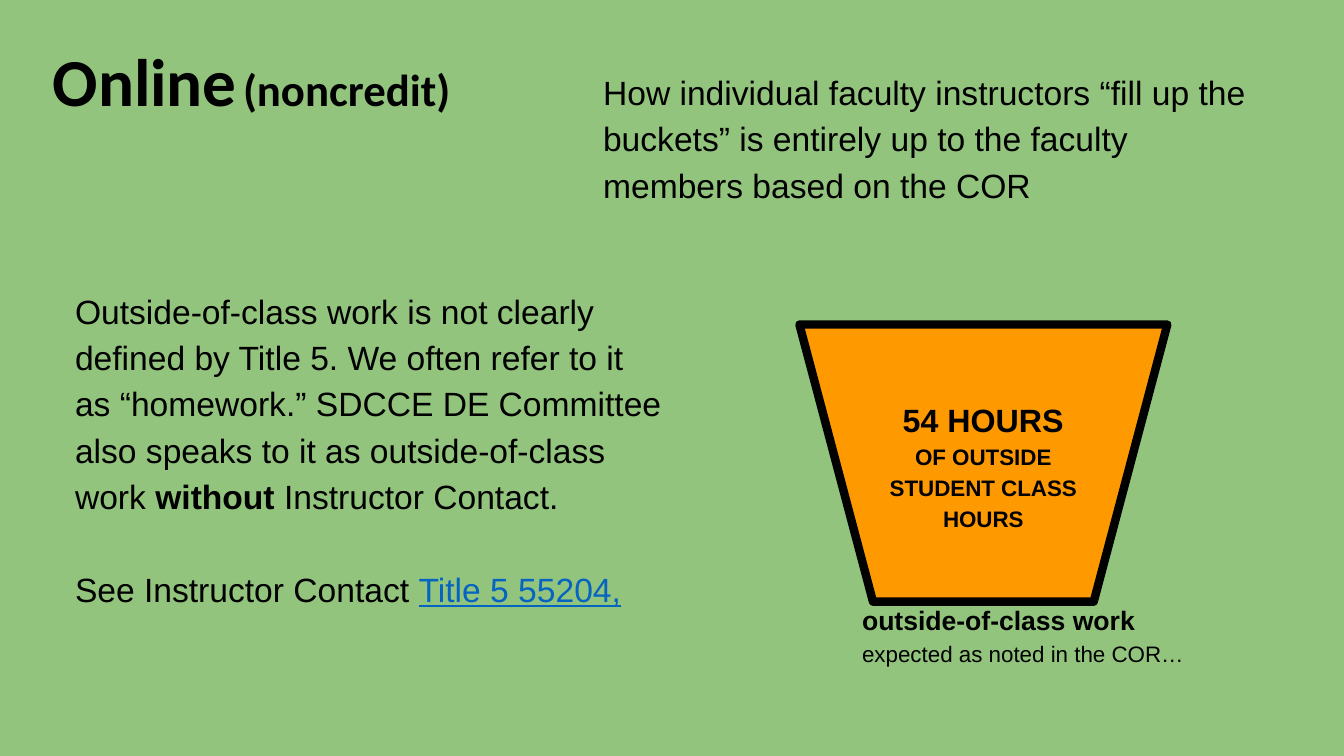
from dataclasses import dataclass

from pptx import Presentation
from pptx.dml.color import RGBColor
from pptx.enum.shapes import MSO_SHAPE
from pptx.enum.text import MSO_ANCHOR, PP_ALIGN
from pptx.util import Pt


@dataclass(frozen=True)
class Theme:
    green: RGBColor = RGBColor.from_string("93C47D")
    orange: RGBColor = RGBColor.from_string("FF9900")
    black: RGBColor = RGBColor.from_string("000000")
    link: RGBColor = RGBColor.from_string("0563C1")
    heading_font: str = "Calibri"
    body_font: str = "Arial"
    title: int = 48
    subtitle: int = 32
    body: int = 24
    hours: int = 23
    caption: int = 19
    small: int = 16
    line_spacing: float = 1.15


theme = Theme()


def set_up_frame(shape, anchor=MSO_ANCHOR.TOP):
    """Apply the slide's margins, wrapping and anchor; return the first paragraph."""
    frame = shape.text_frame
    frame.word_wrap = True
    frame.vertical_anchor = anchor
    frame.margin_left = frame.margin_right = Pt(9.6)
    frame.margin_top = frame.margin_bottom = Pt(9.6)
    paragraph = frame.paragraphs[0]
    paragraph.line_spacing = theme.line_spacing
    return paragraph


def add_run(paragraph, text, size, bold=False, font=theme.body_font, color=theme.black):
    run = paragraph.add_run()
    run.text = text
    run.font.size = Pt(size)
    run.font.bold = bold
    run.font.name = font
    run.font.color.rgb = color
    return run


presentation = Presentation()
presentation.slide_width, presentation.slide_height = Pt(960), Pt(540)
slide = presentation.slides.add_slide(presentation.slide_layouts[6])
shapes = slide.shapes

# Backdrop
backdrop = shapes.add_shape(MSO_SHAPE.RECTANGLE, Pt(-8), Pt(-8), Pt(971), Pt(549))
backdrop.shadow.inherit = False
backdrop.fill.solid()
backdrop.fill.fore_color.rgb = theme.green
backdrop.line.fill.background()

# Title
title = shapes.add_textbox(Pt(28), Pt(37.5), Pt(448), Pt(57.5))
paragraph = set_up_frame(title, MSO_ANCHOR.BOTTOM)
paragraph.line_spacing = 1.0
for text, size in (("Online", theme.title), (" ", theme.caption), ("(noncredit)", theme.subtitle)):
    add_run(paragraph, text, size, bold=True, font=theme.heading_font)

# Bucket
bucket = shapes.add_shape(
    MSO_SHAPE.FLOWCHART_MANUAL_OPERATION, Pt(571), Pt(231.8), Pt(262.8), Pt(198)
)
bucket.shadow.inherit = False
bucket.fill.solid()
bucket.fill.fore_color.rgb = theme.orange
bucket.line.color.rgb = theme.black
bucket.line.width = Pt(6)
paragraph = set_up_frame(bucket, MSO_ANCHOR.MIDDLE)
paragraph.alignment = PP_ALIGN.CENTER
add_run(paragraph, "54 HOURS", theme.hours, bold=True)
add_run(paragraph, " OF OUTSIDE STUDENT CLASS HOURS", theme.small, bold=True)

# Bucket caption
caption = shapes.add_textbox(Pt(606.2), Pt(418.3), Pt(271.4), Pt(136.8))
paragraph = set_up_frame(caption)
add_run(paragraph, "outside-of-class work ", theme.caption, bold=True)
add_run(paragraph, "expected as noted in the COR…", theme.small)

# Faculty statement
statement = shapes.add_textbox(Pt(421.2), Pt(37.5), Pt(499.7), Pt(149))
paragraph = set_up_frame(statement)
add_run(
    paragraph,
    "How individual faculty instructors “fill up the buckets” is entirely up to "
    "the faculty members based on the COR",
    theme.body,
)

# Explanation
explanation = shapes.add_textbox(Pt(44), Pt(193.7), Pt(442.8), Pt(290.9))
paragraph = set_up_frame(explanation)
add_run(
    paragraph,
    "Outside-of-class work is not clearly defined by Title 5. We often refer to it "
    "as “homework.” SDCCE DE Committee also speaks to it as outside-of-class work ",
    theme.body,
)
add_run(paragraph, "without", theme.body, bold=True)
add_run(paragraph, " Instructor Contact.", theme.body)

paragraph = explanation.text_frame.add_paragraph()
paragraph.line_spacing = theme.line_spacing
paragraph.space_before = Pt(33)
add_run(paragraph, "See Instructor Contact ", theme.body)
reference = add_run(paragraph, "Title 5 55204,", theme.body, color=theme.link)
reference.font.underline = True

presentation.save("out.pptx")
